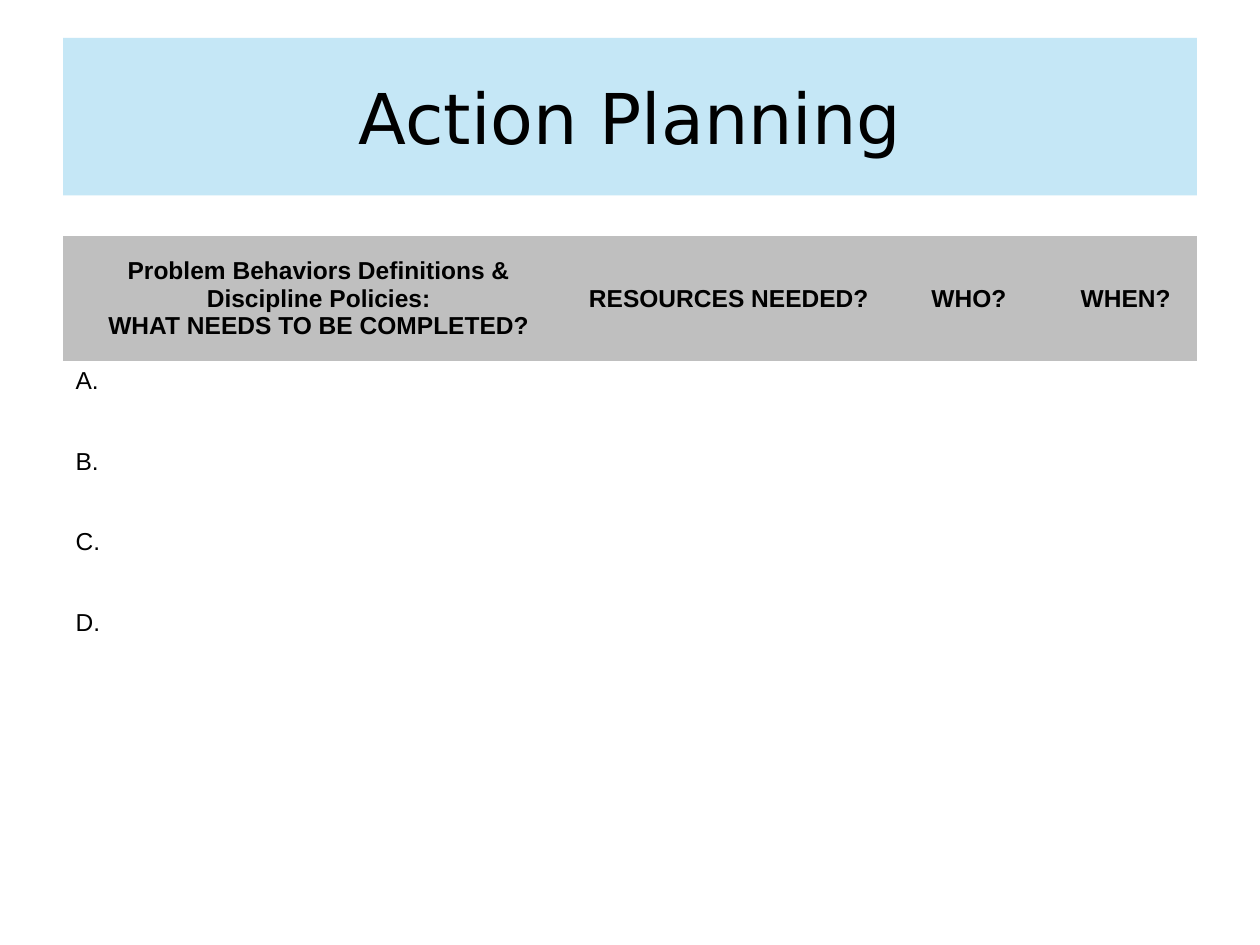
from dataclasses import dataclass

from lxml.etree import SubElement
from pptx import Presentation
from pptx.dml.color import RGBColor
from pptx.enum.text import MSO_ANCHOR as Anchor, PP_ALIGN as Align
from pptx.oxml.ns import qn
from pptx.util import Inches, Pt


@dataclass(frozen=True)
class Theme:
    ink: RGBColor = RGBColor(0x00, 0x00, 0x00)
    banner: RGBColor = RGBColor(0xA9, 0xDC, 0xF2)
    header: RGBColor = RGBColor(0xBF, 0xBF, 0xBF)
    banner_opacity: int = 67
    title_font: str = "DejaVu Sans"
    table_font: str = "Arial"
    title_size: int = 40
    table_size: int = 14


THEME = Theme()
PLAIN_TABLE = "{2D5ABB26-0587-4C30-8999-92F81FD0307C}"
WIDTH, HEIGHT = Inches(10), Inches(7.5)
MARGIN = WIDTH // 20
CONTENT_WIDTH = WIDTH - 2 * MARGIN

HEADINGS = [
    "Problem Behaviors Definitions & Discipline Policies:\nWHAT NEEDS TO BE COMPLETED?",
    "RESOURCES NEEDED?",
    "WHO?",
    "WHEN?",
]
COLUMN_WIDTHS = [4.06, 2.45, 1.36, 1.13]
ACTIONS = ["A.", "B.", "C.", "D."]
HEADER_HEIGHT, ACTION_HEIGHT = 0.99, 0.64


def write(frame, text, font, size, bold=False, align=Align.LEFT):
    frame.text = text
    for paragraph in frame.paragraphs:
        paragraph.alignment = align
        for run in paragraph.runs:
            run.font.name = font
            run.font.size = Pt(size)
            run.font.bold = bold
            run.font.color.rgb = THEME.ink


def add_banner(slide, text):
    banner = slide.shapes.title
    banner.left, banner.top = MARGIN, int(HEIGHT * 0.04)
    banner.width, banner.height = CONTENT_WIDTH, HEIGHT // 6
    banner.fill.solid()
    banner.fill.fore_color.rgb = THEME.banner
    tint = banner._element.spPr.find(".//" + qn("a:srgbClr"))
    SubElement(tint, qn("a:alpha")).set("val", str(THEME.banner_opacity * 1000))
    banner.text_frame.vertical_anchor = Anchor.MIDDLE
    write(banner.text_frame, text, THEME.title_font, THEME.title_size,
          align=Align.CENTER)


def add_plan(slide):
    height = Inches(HEADER_HEIGHT + ACTION_HEIGHT * len(ACTIONS))
    frame = slide.shapes.add_table(
        len(ACTIONS) + 1, len(HEADINGS), MARGIN, HEIGHT // 4, CONTENT_WIDTH, height)
    frame._element.find(".//" + qn("a:tableStyleId")).text = PLAIN_TABLE
    plan = frame.table
    plan.horz_banding = False

    for column, width in zip(plan.columns, COLUMN_WIDTHS):
        column.width = Inches(width)
    for index, row in enumerate(plan.rows):
        row.height = Inches(ACTION_HEIGHT if index else HEADER_HEIGHT)
        for cell in row.cells:
            if index:
                cell.fill.background()
            else:
                cell.fill.solid()
                cell.fill.fore_color.rgb = THEME.header

    for index, heading in enumerate(HEADINGS):
        cell = plan.cell(0, index)
        cell.vertical_anchor = Anchor.MIDDLE
        write(cell.text_frame, heading, THEME.table_font, THEME.table_size,
              bold=True, align=Align.CENTER)
    for index, action in enumerate(ACTIONS, start=1):
        write(plan.cell(index, 0).text_frame, action, THEME.table_font,
              THEME.table_size)


def main():
    deck = Presentation()
    deck.slide_width, deck.slide_height = WIDTH, HEIGHT
    slide = deck.slides.add_slide(deck.slide_layouts[5])
    add_banner(slide, "Action Planning")
    add_plan(slide)
    deck.save("out.pptx")


if __name__ == "__main__":
    main()
